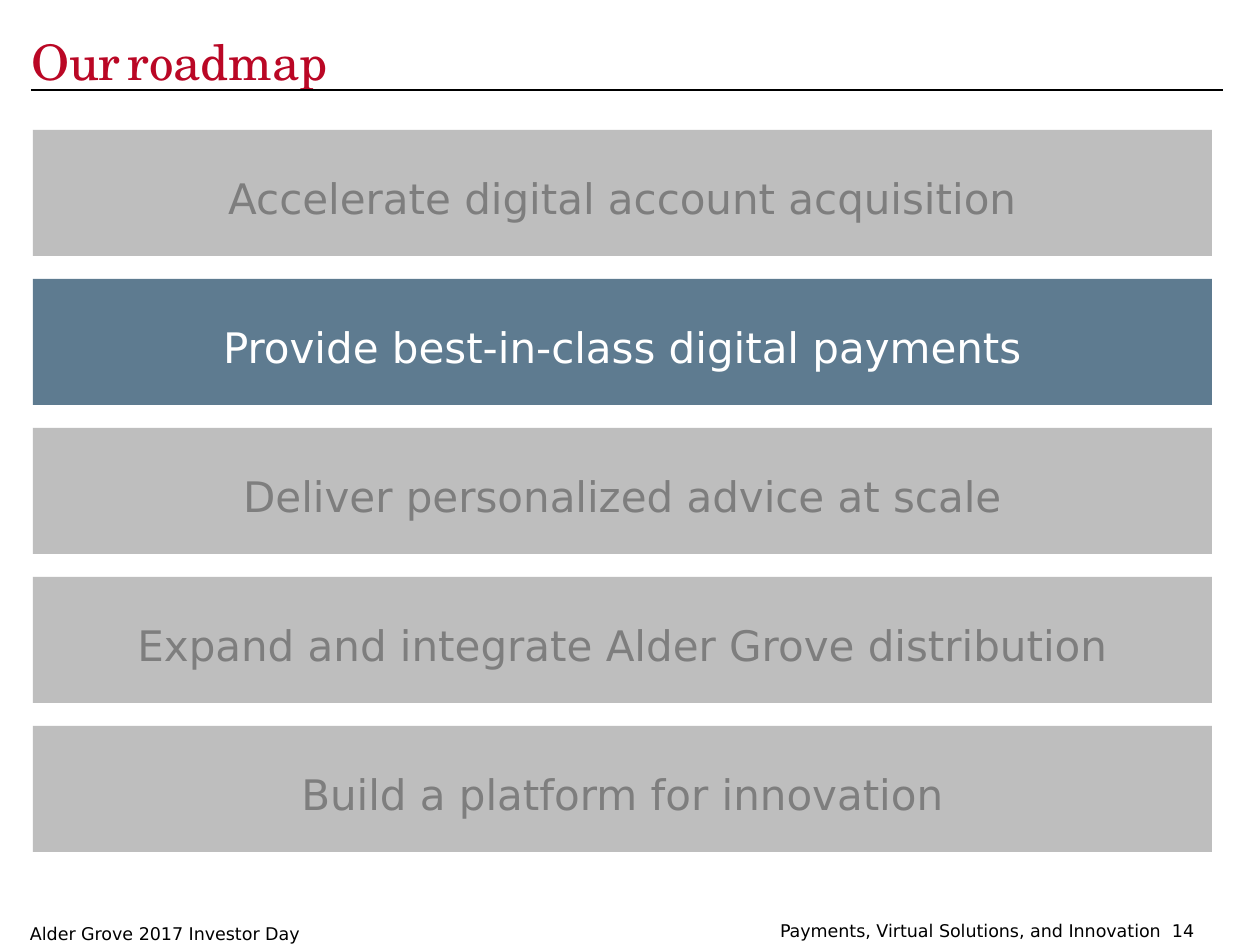
from dataclasses import dataclass

from lxml import etree
from pptx import Presentation
from pptx.dml.color import RGBColor
from pptx.enum.shapes import MSO_CONNECTOR, MSO_SHAPE
from pptx.enum.text import MSO_ANCHOR, MSO_AUTO_SIZE, PP_ALIGN
from pptx.oxml.ns import qn
from pptx.slide import Slide
from pptx.text.text import TextFrame
from pptx.util import Emu, Pt

PX_PER_INCH = 126
STRAIGHT = MSO_CONNECTOR.STRAIGHT
RECTANGLE = MSO_SHAPE.RECTANGLE
TOP, MIDDLE = MSO_ANCHOR.TOP, MSO_ANCHOR.MIDDLE
NO_AUTOSIZE = MSO_AUTO_SIZE.NONE
LEFT, CENTER = PP_ALIGN.LEFT, PP_ALIGN.CENTER

RED = RGBColor(0xBA, 0x07, 0x25)
BLACK = RGBColor(0x00, 0x00, 0x00)
WHITE = RGBColor(0xFF, 0xFF, 0xFF)
SILVER = RGBColor(0xBE, 0xBE, 0xBE)
GRAY = RGBColor(0x7E, 0x7E, 0x7E)
SLATE = RGBColor(0x5E, 0x7B, 0x90)

SERIF = "TeX Gyre Schola"
SANS = "DejaVu Sans"

BAR_LEFT, BAR_TOP, BAR_WIDTH, BAR_HEIGHT = 33, 130, 1179, 126
BAR_PITCH = 149


@dataclass(frozen=True)
class Step:
    label: str
    active: bool = False


@dataclass(frozen=True)
class FooterItem:
    text: str
    left: int
    top: int
    width: int


STEPS = (
    Step("Accelerate digital account acquisition"),
    Step("Provide best-in-class digital payments", active=True),
    Step("Deliver personalized advice at scale"),
    Step("Expand and integrate Alder Grove distribution"),
    Step("Build a platform for innovation"),
)

FOOTER = (
    FooterItem("Payments, Virtual Solutions, and Innovation", 780, 917, 386),
    FooterItem("14", 1172, 917, 38),
    FooterItem("Alder Grove 2017 Investor Day", 30, 920, 280),
)


def px(length: int) -> Emu:
    return Emu(round(length * 914400 / PX_PER_INCH))


def clear_margins(frame: TextFrame) -> None:
    frame.margin_left = frame.margin_right = 0
    frame.margin_top = frame.margin_bottom = 0
    frame.auto_size = NO_AUTOSIZE


def style(frame: TextFrame, font: str, size: int, color: RGBColor,
          align: PP_ALIGN, spacing: float) -> None:
    paragraph = frame.paragraphs[0]
    paragraph.alignment = align
    paragraph.line_spacing = spacing
    paragraph.font.name = font
    paragraph.font.size = Pt(size)
    paragraph.font.color.rgb = color


def draw_title(slide: Slide) -> None:
    title = slide.shapes.title
    title.left, title.top, title.width, title.height = px(31), px(28), px(1192), px(53)
    frame = title.text_frame
    clear_margins(frame)
    frame.vertical_anchor = TOP
    for word, size in (("Our", 28), (" ", 14), ("roadmap", 28)):
        run = frame.paragraphs[0].add_run()
        run.text = word
        run.font.size = Pt(size)
    style(frame, SERIF, 28, RED, LEFT, 1.06)


def draw_rule(slide: Slide) -> None:
    rule = slide.shapes.add_connector(STRAIGHT, px(31), px(90), px(1223), px(90))
    rule.line.color.rgb = BLACK
    rule.line.width = Pt(1.5)
    etree.SubElement(rule._element.spPr, qn("a:effectLst"))


def draw_step(slide: Slide, step: Step, top: int) -> None:
    bar = slide.shapes.add_shape(RECTANGLE, px(BAR_LEFT), px(top), px(BAR_WIDTH), px(BAR_HEIGHT))
    bar.shadow.inherit = False
    bar.fill.solid()
    bar.fill.fore_color.rgb = SLATE if step.active else SILVER
    bar.line.fill.background()
    frame = bar.text_frame
    clear_margins(frame)
    frame.margin_top = px(10)
    frame.vertical_anchor = MIDDLE
    frame.word_wrap = True
    frame.text = step.label
    style(frame, SANS, 24, WHITE if step.active else GRAY, CENTER, 1.0)


def draw_footer_item(slide: Slide, item: FooterItem) -> None:
    box = slide.shapes.add_textbox(px(item.left), px(item.top), px(item.width), px(22))
    frame = box.text_frame
    clear_margins(frame)
    frame.word_wrap = True
    frame.text = item.text
    style(frame, SANS, 10, BLACK, LEFT, 1.14)


def main() -> None:
    deck = Presentation()
    deck.slide_width, deck.slide_height = px(1260), px(945)
    slide = deck.slides.add_slide(deck.slide_layouts[5])
    draw_title(slide)
    draw_rule(slide)
    for index, step in enumerate(STEPS):
        draw_step(slide, step, BAR_TOP + index * BAR_PITCH)
    for item in FOOTER:
        draw_footer_item(slide, item)
    deck.save("out.pptx")


if __name__ == "__main__":
    main()
